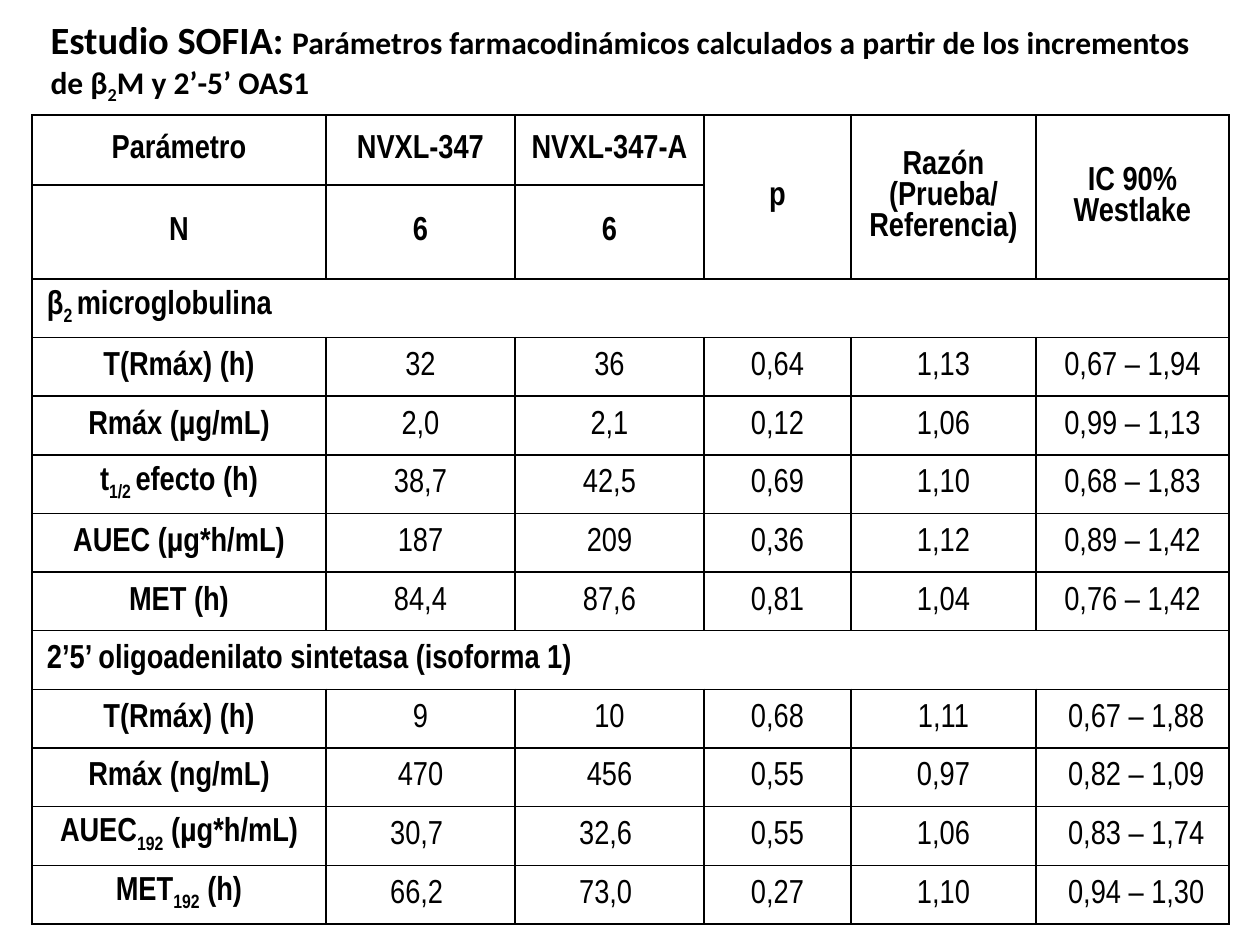
"""Build the SOFIA study slide with its table of pharmacodynamic parameters."""
from lxml import etree
from pptx import Presentation
from pptx import util as u
from pptx.dml.color import RGBColor
from pptx.enum import text
from pptx.oxml import ns

PX = u.Inches(1) / 126
BLACK = RGBColor(0, 0, 0)
WHITE = RGBColor(255, 255, 255)
COLUMN_WIDTHS = [294, 189, 189, 147, 185, 193]
HEADER_HEIGHTS = [70, 94]
BODY_HEIGHT = 645
SECTION_INDENT = 15
SUBSCRIPT_MARK = "~"

TITLE = [
    ("Estudio SOFIA: ", 22),
    ("Parámetros farmacodinámicos calculados a partir de los incrementos "
     "de β~2~M y 2’-5’ OAS1", 18),
]
HEADER = [
    ["Parámetro", "NVXL-347", "NVXL-347-A", "p",
     "Razón\n(Prueba/\nReferencia)", "IC 90%\nWestlake"],
    ["N", "6", "6"],
]
BODY = [
    ["β~2 ~microglobulina"],
    ["T(Rmáx) (h)", "32", "36", "0,64", "1,13", "0,67 – 1,94"],
    ["Rmáx (µg/mL)", "2,0", "2,1", "0,12", "1,06", "0,99 – 1,13"],
    ["t~1/2 ~efecto (h)", "38,7", "42,5", "0,69", "1,10", "0,68 – 1,83"],
    ["AUEC (µg*h/mL)", "187", "209", "0,36", "1,12", "0,89 – 1,42"],
    ["MET (h)", "84,4", "87,6", "0,81", "1,04", "0,76 – 1,42"],
    ["2’5’ oligoadenilato sintetasa (isoforma 1)"],
    ["T(Rmáx) (h)", "9", "10", "0,68", "1,11", " 0,67 – 1,88"],
    ["Rmáx (ng/mL)", "470", "456", "0,55", "0,97", " 0,82 – 1,09"],
    ["AUEC~192~ (µg*h/mL)", "30,7 ", "32,6 ", "0,55", "1,06", " 0,83 – 1,74"],
    ["MET~192~ (h)", "66,2 ", "73,0 ", "0,27", "1,10", " 0,94 – 1,30"],
]


def px(length):
    """Turn pixels into EMU."""
    return u.Emu(round(length * PX))


def add_spans(para, content, size=None):
    """Add runs and line breaks, lowering the parts between subscript marks."""
    for line_number, line in enumerate(content.split("\n")):
        if line_number:
            para.add_line_break()
        for part_number, part in enumerate(line.split(SUBSCRIPT_MARK)):
            span = para.add_run()
            span.text = part
            if size:
                span.font.size = u.Pt(size)
            if part_number % 2:
                span._r.get_or_add_rPr().set("baseline", "-25000")


def set_font(para, name, bold, size=None):
    """Set the font shared by all runs of a paragraph."""
    para.font.name = name
    para.font.bold = bold
    para.font.color.rgb = BLACK
    if size:
        para.font.size = u.Pt(size)


def add_title(page):
    """Fill and place the title placeholder."""
    title = page.shapes.title
    title.left, title.top, title.width, title.height = map(px, (38, 10, 1201, 97))
    frame = title.text_frame
    frame.word_wrap = True
    frame.auto_size = text.MSO_AUTO_SIZE.NONE
    frame.vertical_anchor = text.MSO_ANCHOR.TOP
    para = frame.paragraphs[0]
    para.alignment = text.PP_ALIGN.LEFT
    para.space_after = u.Pt(6)
    set_font(para, "Calibri", True)
    for content, size in TITLE:
        add_spans(para, content, size)


def style_cell(cell):
    """Give a cell thin black borders, a white fill and no margins."""
    properties = cell._tc.get_or_add_tcPr()
    for side in ("lnL", "lnR", "lnT", "lnB"):
        border = etree.SubElement(properties, ns.qn(f"a:{side}"), w=str(u.Pt(1)))
        fill = etree.SubElement(border, ns.qn("a:solidFill"))
        etree.SubElement(fill, ns.qn("a:srgbClr"), val=str(BLACK))
    cell.fill.solid()
    cell.fill.fore_color.rgb = WHITE
    cell.vertical_anchor = text.MSO_ANCHOR.MIDDLE
    cell.margin_left = cell.margin_right = cell.margin_top = cell.margin_bottom = 0


def write_cell(cell, content, bold, section=False):
    """Write one cell, centred unless it names a section."""
    para = cell.text_frame.paragraphs[0]
    para.space_before = para.space_after = u.Pt(5)
    para.alignment = text.PP_ALIGN.LEFT if section else text.PP_ALIGN.CENTER
    if section:
        para._p.get_or_add_pPr().set("indent", str(px(SECTION_INDENT)))
    set_font(para, "Arial Narrow", bold, 19)
    add_spans(para, content)


def add_parameter_table(page):
    """Add the table with its merged header cells and section rows."""
    rows = HEADER + BODY
    heights = HEADER_HEIGHTS + [BODY_HEIGHT / len(BODY)] * len(BODY)
    frame = page.shapes.add_table(
        len(rows), len(COLUMN_WIDTHS), px(32), px(115),
        px(sum(COLUMN_WIDTHS)), px(sum(heights)))
    table = frame.table
    table.first_row = table.horz_banding = False
    for column, width in zip(table.columns, COLUMN_WIDTHS):
        column.width = px(width)
    for row, height in zip(table.rows, heights):
        row.height = px(height)
    for cell in table.iter_cells():
        style_cell(cell)
    for column in range(len(HEADER[1]), len(COLUMN_WIDTHS)):
        table.cell(0, column).merge(table.cell(1, column))
    for row, contents in enumerate(rows):
        section = len(contents) == 1
        if section:
            table.cell(row, 0).merge(table.cell(row, len(COLUMN_WIDTHS) - 1))
        for column, content in enumerate(contents):
            bold = row < len(HEADER) or column == 0
            write_cell(table.cell(row, column), content, bold, section)


def main():
    """Build and save the deck."""
    deck = Presentation()
    deck.slide_width, deck.slide_height = px(1260), px(945)
    page = deck.slides.add_slide(deck.slide_layouts.get_by_name("Title Only"))
    add_parameter_table(page)
    add_title(page)
    deck.save("out.pptx")


if __name__ == "__main__":
    main()
